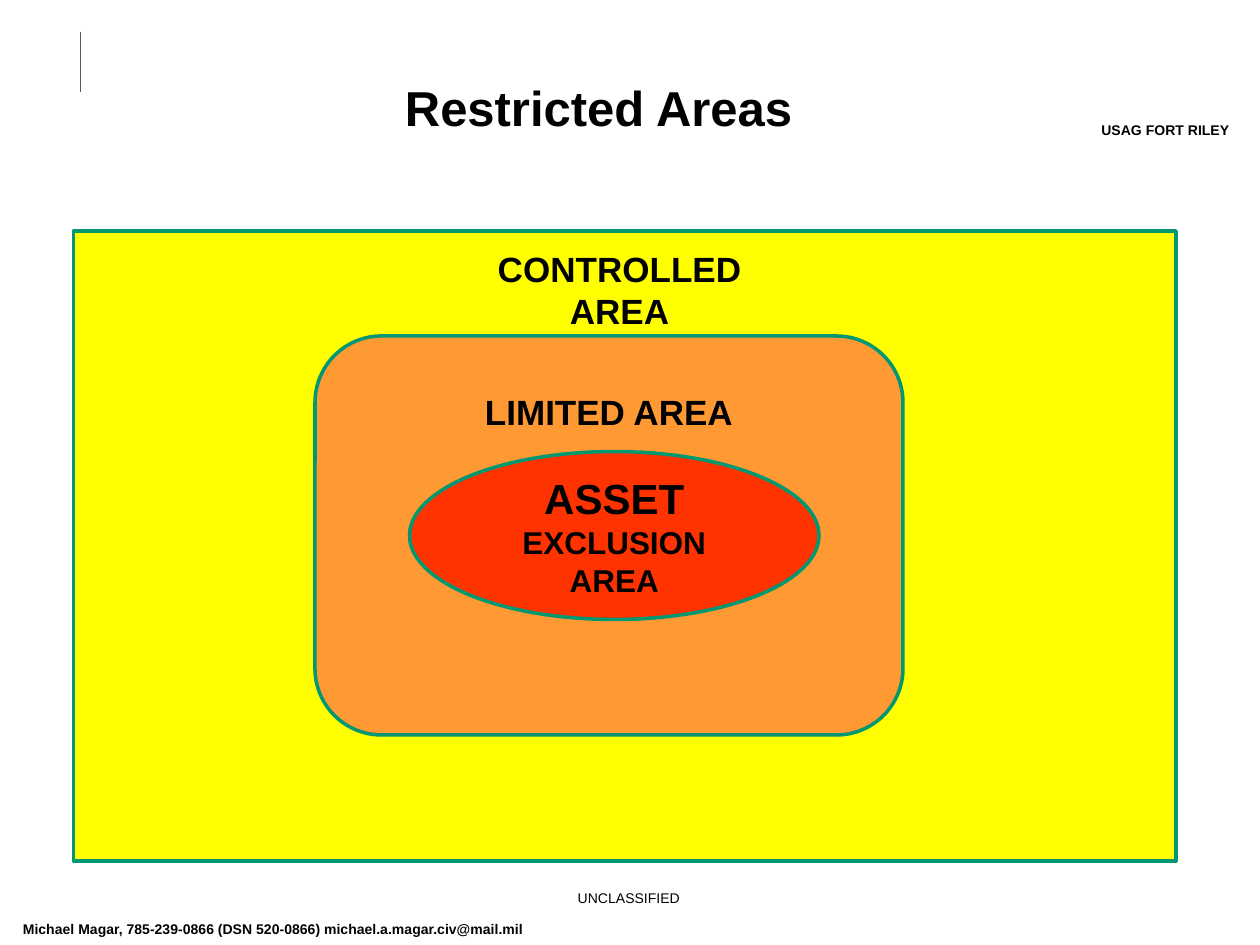
from dataclasses import dataclass

from lxml import etree
from pptx import Presentation
from pptx import util as u
from pptx.dml.color import RGBColor
from pptx.enum import shapes, text
from pptx.oxml.ns import qn


@dataclass(frozen=True)
class Theme:
    font: str = "Arial"
    ink: str = "000000"
    rule: str = "595959"
    outline: str = "009771"
    controlled: str = "FFFF00"
    limited: str = "FF9933"
    exclusion: str = "FF3300"
    title: int = 28
    asset: int = 24
    area: int = 20
    inner: int = 18
    small: int = 8


@dataclass(frozen=True)
class Box:
    """Columns and rows of a 120 by 90 grid on the slide."""
    x: float
    y: float
    w: float
    h: float

    def inside(self, x, y, w, h):
        return Box(self.x + x, self.y + y, w, h)

    def emu(self):
        return [round(n * CELL) for n in (self.x, self.y, self.w, self.h)]


THEME = Theme()
CELL = u.Inches(10) / 120
SHAPE = shapes.MSO_SHAPE
ANCHOR = text.MSO_ANCHOR


def write(sp, *lines, bold=True, align=text.PP_ALIGN.CENTER, anchor=ANCHOR.TOP):
    """Fill a shape with (wording, size) lines, one paragraph each."""
    tf = sp.text_frame
    tf.word_wrap = True
    tf.auto_size = text.MSO_AUTO_SIZE.NONE
    tf.vertical_anchor = anchor
    for i, (wording, size) in enumerate(lines):
        p = tf.add_paragraph() if i else tf.paragraphs[0]
        p.alignment = align
        r = p.add_run()
        r.text = wording
        r.font.name, r.font.size, r.font.bold = THEME.font, u.Pt(size), bold
        r.font.color.rgb = RGBColor.from_string(THEME.ink)
    return tf


def add_area(s, kind, box, fill, outlined=True):
    sp = s.shapes.add_shape(kind, *box.emu())
    sp.shadow.inherit = False
    sp.fill.solid()
    sp.fill.fore_color.rgb = RGBColor.from_string(fill)
    if outlined:
        sp.line.color.rgb = RGBColor.from_string(THEME.outline)
        sp.line.width = u.Pt(2)
    else:
        sp.line.fill.background()
    return sp


def add_note(s, box, wording, **fmt):
    write(s.shapes.add_textbox(*box.emu()), (wording, THEME.small), **fmt)


def add_header(s, box):
    x, y, _, h = box.inside(7.7, 3, 0, 5.75).emu()
    rule = s.shapes.add_connector(shapes.MSO_CONNECTOR.STRAIGHT, x, y, x, y + h)
    rule.line.color.rgb = RGBColor.from_string(THEME.rule)
    rule.line.width = u.Pt(0.75)
    etree.SubElement(rule._element.spPr, qn("a:effectLst"))

    title = s.shapes.title
    title.left, title.top, title.width, title.height = box.inside(18, 6.6, 78, 7.2).emu()
    write(title, ("Restricted Areas", THEME.title), anchor=ANCHOR.MIDDLE)
    add_note(s, box.inside(103.1, 11, 15.8, 2.9), "USAG FORT RILEY")


def add_nested_areas(s, box):
    add_area(s, SHAPE.RECTANGLE, box, THEME.controlled)
    label = add_area(s, SHAPE.RECTANGLE, box.inside(35, 1, 34, 9.2),
                     THEME.controlled, outlined=False)
    write(label, ("CONTROLLED AREA", THEME.area))

    limited = add_area(s, SHAPE.ROUNDED_RECTANGLE, box.inside(23, 10, 56, 38), THEME.limited)
    write(limited, ("LIMITED AREA", THEME.area)).margin_top = u.Inches(0.28)

    asset = add_area(s, SHAPE.OVAL, box.inside(32, 21, 39, 16), THEME.exclusion)
    write(asset, ("ASSET", THEME.asset), ("EXCLUSION AREA", THEME.inner),
          anchor=ANCHOR.MIDDLE)


def add_footer(s, box):
    add_note(s, box.inside(44.2, 0, 31.4, 2.9), "UNCLASSIFIED", bold=False)
    add_note(s, box.inside(1, 3, 74.6, 2.9),
             "Michael Magar, 785-239-0866 (DSN 520-0866) michael.a.magar.civ@mail.mil",
             align=text.PP_ALIGN.LEFT)


def main():
    prs = Presentation()
    prs.slide_width, prs.slide_height = u.Inches(10), u.Inches(7.5)
    s = prs.slides.add_slide(prs.slide_layouts.get_by_name("Title Only"))
    add_header(s, Box(0, 0, 120, 22))
    add_nested_areas(s, Box(7, 22, 105, 60))
    add_footer(s, Box(0, 84.1, 120, 5.9))
    prs.save("out.pptx")


if __name__ == "__main__":
    main()
